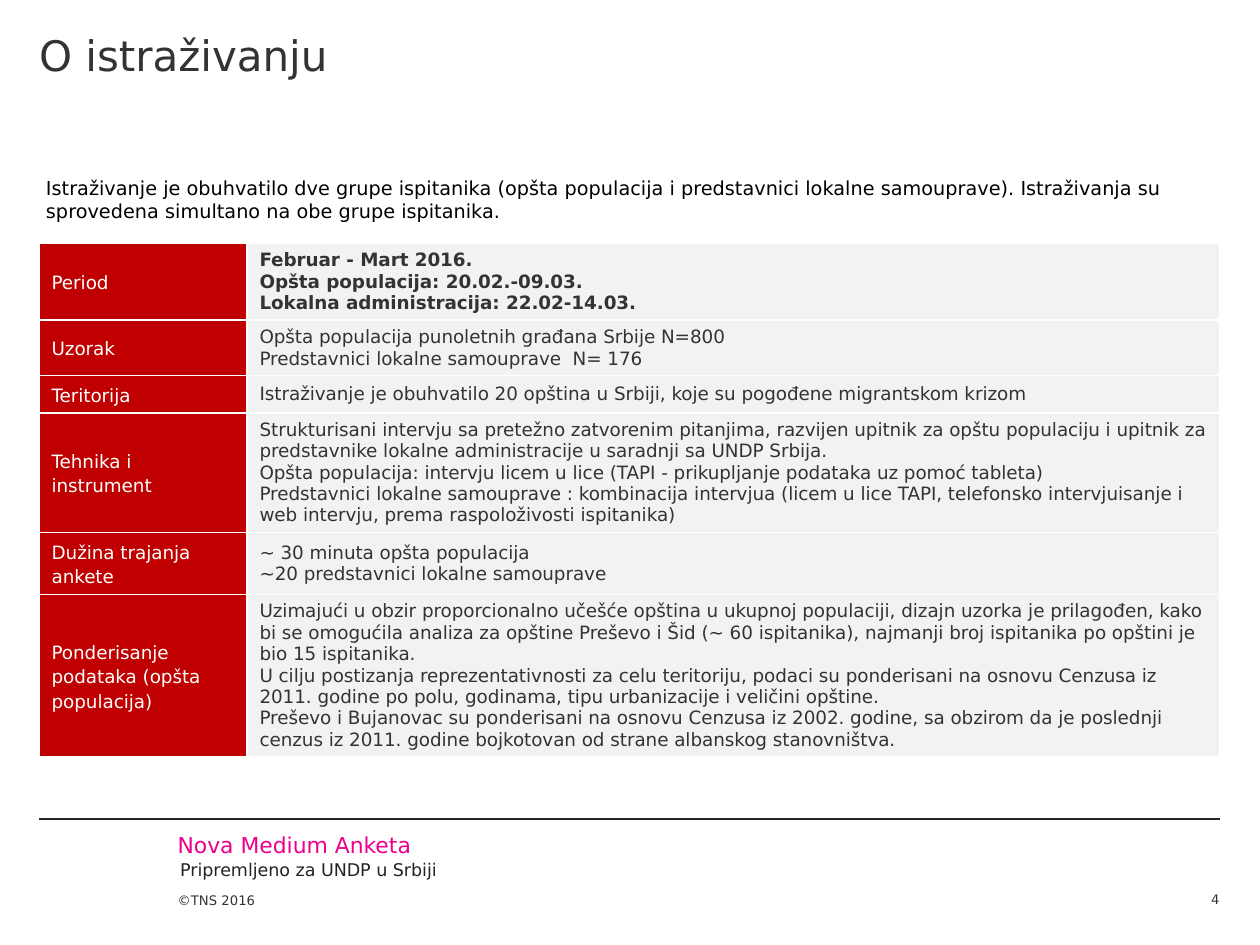
from dataclasses import dataclass

from lxml.etree import SubElement
from pptx import Presentation
from pptx.dml.color import RGBColor
from pptx.enum.shapes import MSO_CONNECTOR
from pptx.enum.text import MSO_ANCHOR, MSO_AUTO_SIZE, PP_ALIGN
from pptx.oxml.ns import qn
from pptx.util import Pt

FONT = "DejaVu Sans"
TEXT, WHITE, RED, PALE = "333333", "FFFFFF", "C00000", "F2F2F2"
LEFT, WIDTH = 22.3, 674.6
LABEL_WIDTH = 118.8


@dataclass
class Label:
    text: str
    left: float
    top: float
    width: float
    height: float
    size: float
    color: str = TEXT
    margins: tuple = (0, 0, 0, 0)
    anchor: MSO_ANCHOR = MSO_ANCHOR.TOP
    align: PP_ALIGN = PP_ALIGN.LEFT


@dataclass
class Row:
    label: str
    lines: list
    height: float
    bold: bool = False


LABELS = [
    Label("Istraživanje je obuhvatilo dve grupe ispitanika (opšta populacija i predstavnici lokalne "
          "samouprave). Istraživanja su sprovedena simultano na obe grupe ispitanika.",
          19.2, 97.3, 678.2, 34, 11, "000000", (7.2, 3.6, 7.2, 3.6)),
    Label("Nova Medium Anketa", 101.5, 475.2, 238.3, 15, 12.5, "EC008C"),
    Label("Pripremljeno za UNDP u Srbiji", 103, 490.8, 490, 13, 10, "232323"),
    Label("©TNS 2016", 101.5, 498.2, 60, 41.8, 7.5, margins=(0, 0, 0, 20.9),
          anchor=MSO_ANCHOR.BOTTOM),
    Label("4", 657.3, 498.2, 39.6, 20.2, 7.5, anchor=MSO_ANCHOR.BOTTOM, align=PP_ALIGN.RIGHT),
]

ROWS = [
    Row("Period", [
        "Februar - Mart 2016.",
        "Opšta populacija: 20.02.-09.03.",
        "Lokalna administracija: 22.02-14.03."], 43.5, bold=True),
    Row("Uzorak", [
        "Opšta populacija punoletnih građana Srbije N=800",
        "Predstavnici lokalne samouprave  N= 176"], 31.6),
    Row("Teritorija", [
        "Istraživanje je obuhvatilo 20 opština u Srbiji, koje su pogođene migrantskom krizom"], 21.2),
    Row("Tehnika i instrument", [
        "Strukturisani intervju sa pretežno zatvorenim pitanjima, razvijen upitnik za opštu populaciju "
        "i upitnik za predstavnike lokalne administracije u saradnji sa UNDP Srbija.",
        "Opšta populacija: intervju licem u lice (TAPI - prikupljanje podataka uz pomoć tableta)",
        "Predstavnici lokalne samouprave : kombinacija intervjua (licem u lice TAPI, telefonsko "
        "intervjuisanje i web intervju, prema raspoloživosti ispitanika)"], 68.5),
    Row("Dužina trajanja ankete", [
        "~ 30 minuta opšta populacija",
        "~20 predstavnici lokalne samouprave"], 35.2),
    Row("Ponderisanje podataka (opšta populacija)", [
        "Uzimajući u obzir proporcionalno učešće opština u ukupnoj populaciji, dizajn uzorka je "
        "prilagođen, kako bi se omogućila analiza za opštine Preševo i Šid (~ 60 ispitanika), "
        "najmanji broj ispitanika po opštini je bio 15 ispitanika.",
        "U cilju postizanja reprezentativnosti za celu teritoriju, podaci su ponderisani na osnovu "
        "Cenzusa iz 2011. godine po polu, godinama, tipu urbanizacije i veličini opštine.",
        "Preševo i Bujanovac su ponderisani na osnovu Cenzusa iz 2002. godine, sa obzirom da je "
        "poslednji cenzus iz 2011. godine bojkotovan od strane albanskog stanovništva."], 92.6),
]


def rgb(color: str) -> RGBColor:
    return RGBColor.from_string(color)


def add_span(para, text: str, size: float, color: str, bold: bool = False) -> None:
    span = para.add_run()
    span.text = text
    span.font.name = FONT
    span.font.size = Pt(size)
    span.font.bold = bold
    span.font.color.rgb = rgb(color)


def fill_box(box, label: Label) -> None:
    box.left, box.top = Pt(label.left), Pt(label.top)
    box.width, box.height = Pt(label.width), Pt(label.height)
    frame = box.text_frame
    frame.word_wrap = True
    frame.auto_size = MSO_AUTO_SIZE.NONE
    frame.vertical_anchor = label.anchor
    (frame.margin_left, frame.margin_top,
     frame.margin_right, frame.margin_bottom) = map(Pt, label.margins)
    para = frame.paragraphs[0]
    para.alignment = label.align
    add_span(para, label.text, label.size, label.color)


def fill_cell(cell, lines: list, fill: str, color: str, bold: bool = False) -> None:
    # Borders come before the fill in the cell properties
    properties = cell._tc.get_or_add_tcPr()
    for side in ("a:lnL", "a:lnR", "a:lnT", "a:lnB"):
        border = SubElement(properties, qn(side), w=str(Pt(1)))
        solid = SubElement(border, qn("a:solidFill"))
        SubElement(solid, qn("a:srgbClr"), val=WHITE)
    cell.fill.solid()
    cell.fill.fore_color.rgb = rgb(fill)
    cell.vertical_anchor = MSO_ANCHOR.MIDDLE
    frame = cell.text_frame
    for index, line in enumerate(lines):
        para = frame.add_paragraph() if index else frame.paragraphs[0]
        add_span(para, line, 10.5, color, bold)


def add_survey_table(page) -> None:
    total = sum(row.height for row in ROWS)
    table = page.shapes.add_table(len(ROWS), 2, Pt(LEFT), Pt(139), Pt(WIDTH), Pt(total)).table
    table.first_row = table.horz_banding = False
    table.columns[0].width = Pt(LABEL_WIDTH)
    table.columns[1].width = Pt(WIDTH - LABEL_WIDTH)
    for index, row in enumerate(ROWS):
        table.rows[index].height = Pt(row.height)
        heading = table.cell(index, 0)
        fill_cell(heading, [row.label], RED, WHITE)
        para = heading.text_frame.paragraphs[0]
        para.line_spacing, para.space_after = Pt(14), Pt(5)
        fill_cell(table.cell(index, 1), row.lines, PALE, TEXT, row.bold)


def add_footer_rule(page) -> None:
    rule = page.shapes.add_connector(
        MSO_CONNECTOR.STRAIGHT, Pt(LEFT), Pt(468), Pt(LEFT + WIDTH), Pt(468))
    rule.line.color.rgb = rgb("262626")
    rule.line.width = Pt(0.75)
    SubElement(rule._element.spPr, qn("a:effectLst"))


def main() -> None:
    deck = Presentation()
    deck.slide_width, deck.slide_height = Pt(720), Pt(540)
    page = deck.slides.add_slide(deck.slide_layouts[5])

    # Title
    fill_box(page.shapes.title,
             Label("O istraživanju", LEFT, 0, WIDTH, 81.4, 24, margins=(0, 16.6, 0, 0)))

    # Survey facts
    add_survey_table(page)

    # Introduction and footer
    add_footer_rule(page)
    for label in LABELS:
        fill_box(page.shapes.add_textbox(0, 0, 0, 0), label)

    deck.save("out.pptx")


if __name__ == "__main__":
    main()
